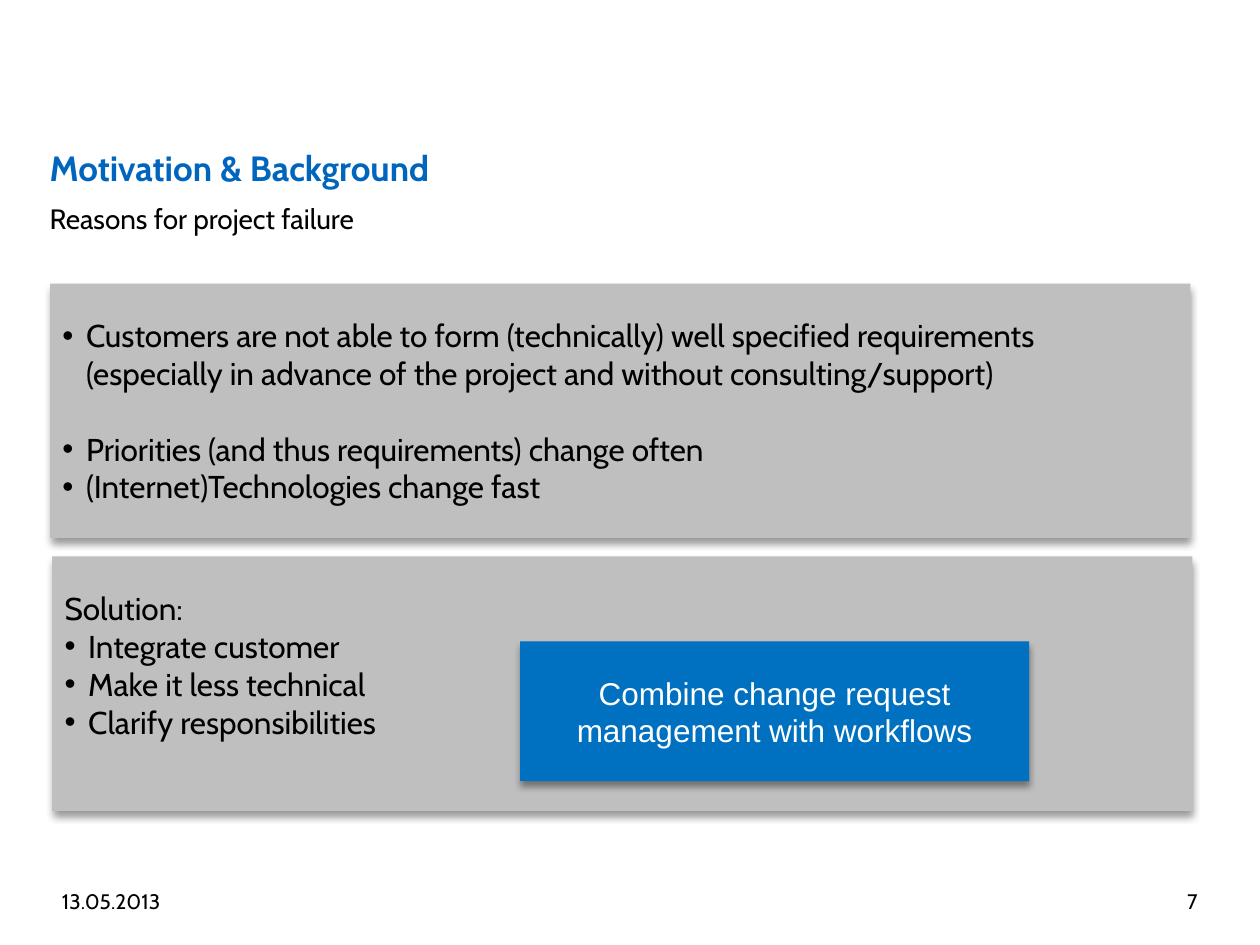
from lxml import etree
from pptx import Presentation
from pptx.dml import color
from pptx.enum import shapes, text
from pptx.oxml import ns
from pptx.util import Pt

HUES = {"title": "0065BD", "ink": "000000", "panel": "BFBFBF",
        "call": "0070C0", "light": "FFFFFF"}
LEFT, MID, RIGHT = text.PP_ALIGN.LEFT, text.PP_ALIGN.CENTER, text.PP_ALIGN.RIGHT
TOP, CENTER = text.MSO_ANCHOR.TOP, text.MSO_ANCHOR.MIDDLE
RECT, ROUND = shapes.MSO_SHAPE.RECTANGLE, shapes.MSO_SHAPE.ROUNDED_RECTANGLE


def write(shape, lines, size=18, font="Cabin", hue="ink", bold=False, align=LEFT,
          anchor=CENTER, inset=(7.2, 3.6, 7.2, 3.6), space=1, indent=0, gaps=()):
    frame = shape.text_frame
    frame.word_wrap = True
    frame.vertical_anchor = anchor
    (frame.margin_left, frame.margin_top,
     frame.margin_right, frame.margin_bottom) = [Pt(side) for side in inset]
    for i, line in enumerate(lines):
        para = frame.paragraphs[0] if i == 0 else frame.add_paragraph()
        para.text = line.removeprefix("• ")
        para.alignment = align
        para.line_spacing = space
        if i in gaps:
            para.space_before = Pt(gaps[i])
        if indent:
            props = para._p.get_or_add_pPr()
            props.set("marL", str(Pt(indent)))
            props.set("indent", str(Pt(-indent)))
            if line.startswith("• "):
                face = etree.SubElement(props, ns.qn("a:buFont"))
                face.set("typeface", "Arial")
                etree.SubElement(props, ns.qn("a:buChar")).set("char", "•")
        for run in para.runs:
            run.font.size = Pt(size)
            run.font.name = font
            run.font.bold = bold
            run.font.color.rgb = color.RGBColor.from_string(HUES[hue])


def panel(kind, left, top, width, height, fill):
    shape = slide.shapes.add_shape(kind, Pt(left), Pt(top), Pt(width), Pt(height))
    if kind == ROUND:
        shape.adjustments[0] = 0
    shape.fill.solid()
    shape.fill.fore_color.rgb = color.RGBColor.from_string(HUES[fill])
    shape.line.fill.background()
    shape.shadow.inherit = False
    effects = shape._element.spPr.find(ns.qn("a:effectLst"))
    shadow = etree.SubElement(effects, ns.qn("a:outerShdw"), blurRad=str(Pt(4)),
                              dist=str(Pt(3)), dir="5400000", rotWithShape="0")
    tint = etree.SubElement(shadow, ns.qn("a:srgbClr"), val=HUES["ink"])
    etree.SubElement(tint, ns.qn("a:alpha"), val="40000")
    return shape


deck = Presentation()
deck.slide_width, deck.slide_height = Pt(720), Pt(540)
slide = deck.slides.add_slide(deck.slide_layouts[6])

flush = {"inset": (0, 0, 0, 0), "space": 1.25, "anchor": TOP}
labels = [
    ("Motivation & Background", (28.3, 77.8, 584.6, 28),
     {"size": 20, "hue": "title", "bold": True, **flush}),
    ("Reasons for project failure", (28.3, 110.2, 584.6, 23), {"size": 16, **flush}),
    ("13.05.2013", (28.3, 500.4, 168, 28.8), {"size": 12}),
    ("7", (523.4, 500.4, 168, 28.8), {"size": 12, "align": RIGHT}),
]
for label, place, style in labels:
    write(slide.shapes.add_textbox(*[Pt(n) for n in place]), [label], **style)

why = panel(ROUND, 28.6, 162, 651.6, 145.4, "panel")
write(why, [
    "• Customers are not able to form (technically) well specified requirements\v"
    "(especially in advance of the project and without consulting/support)",
    "• Priorities (and thus requirements) change often",
    "• (Internet)Technologies change fast",
], indent=13.5, gaps={1: 21.6})

fix = panel(ROUND, 29.8, 318, 651.6, 145.4, "panel")
write(fix, [
    "Solution:",
    "• Integrate customer",
    "• Make it less technical",
    "• Clarify responsibilities",
], indent=13.5, inset=(7.2, 3.6, 7.2, 25.2))

call = panel(RECT, 297.2, 366.5, 290.9, 79.9, "call")
write(call, ["Combine change request management with workflows"],
      font="Arial", hue="light", align=MID)

deck.save("out.pptx")
